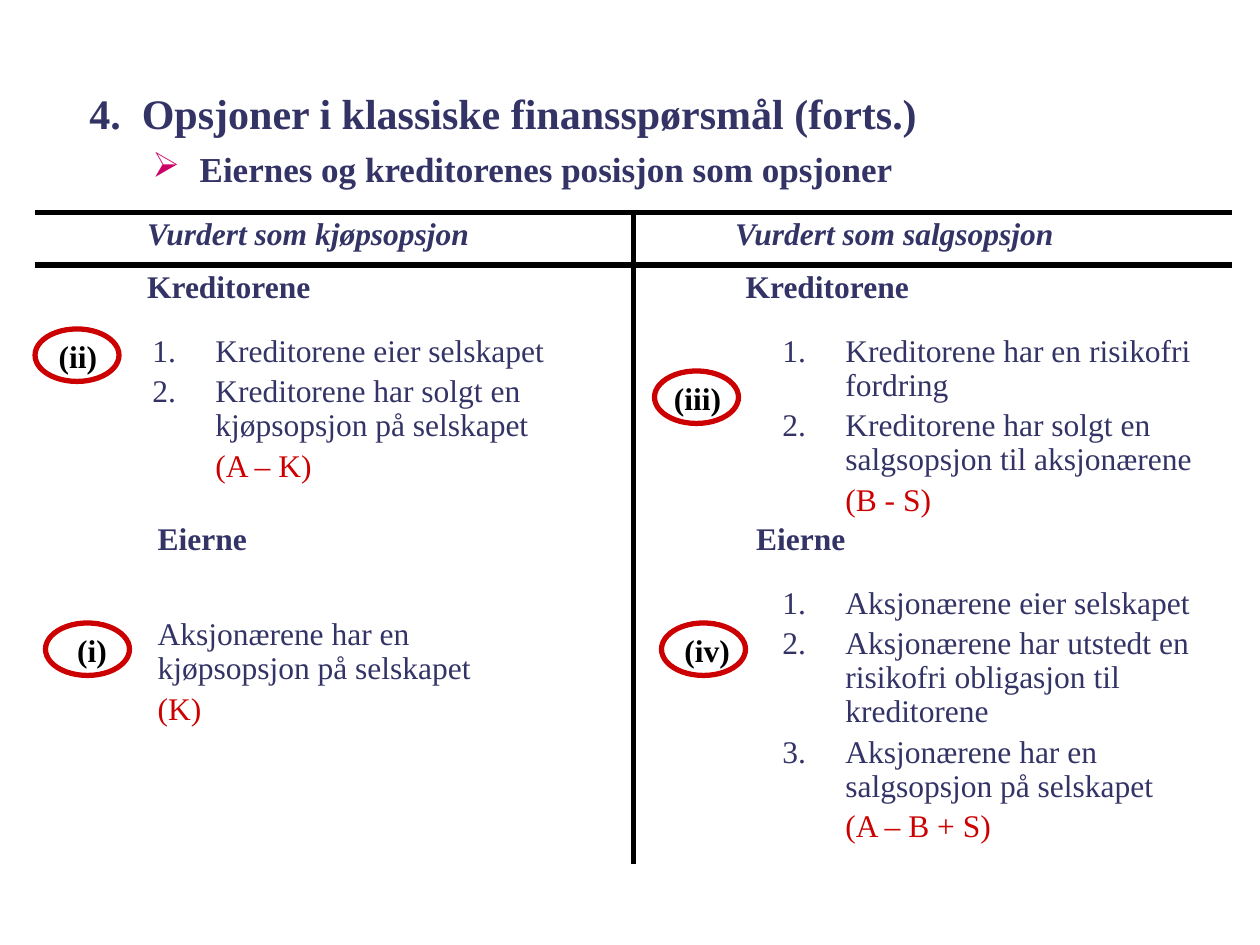
import pptx
import pptx.dml.color
import pptx.enum.shapes
import pptx.enum.text
import pptx.oxml.ns
import pptx.util
from lxml import etree

Pt = pptx.util.Pt
qn = pptx.oxml.ns.qn


def colour(value):
    return pptx.dml.color.RGBColor.from_string(value)


class SlideBuilder:
    font = "Times New Roman"
    ink = "333366"
    red = "CC0000"
    black = "000000"
    accent = "CC0066"
    size = 18
    stroke = 3

    def __init__(self, page):
        self.page = page

    def box(self, left, top, width, height):
        frame = self.page.shapes.add_textbox(Pt(left), Pt(top), Pt(width), Pt(height)).text_frame
        frame.word_wrap = True
        return frame

    def span(self, para, text, fill=None, size=None, bold=False, italic=False):
        span = para.add_run()
        span.text = text
        span.font.name = self.font
        span.font.size = Pt(size or self.size)
        span.font.bold = bold
        span.font.italic = italic
        span.font.color.rgb = colour(fill or self.ink)

    def layout(self, para, margin, hanging=0, marker=None, tight=True):
        properties = para._p.get_or_add_pPr()
        properties.set("marL", str(Pt(margin)))
        properties.set("indent", str(-Pt(hanging)))
        if marker == "number":
            etree.SubElement(properties, qn("a:buAutoNum"), type="arabicPeriod")
        elif marker:
            bullet_colour = etree.SubElement(properties, qn("a:buClr"))
            etree.SubElement(bullet_colour, qn("a:srgbClr"), val=self.accent)
            etree.SubElement(properties, qn("a:buChar"), char=marker)
        if tight:
            para.line_spacing = 0.9

    def title(self, number, text):
        frame = self.box(44, 31.5, 642, 66)
        frame.vertical_anchor = pptx.enum.text.MSO_ANCHOR.MIDDLE
        para = frame.paragraphs[0]
        self.layout(para, 30, 30, tight=False)
        self.span(para, f"{number}\t{text}", size=24, bold=True)

    def subtitle(self, text):
        para = self.box(80, 83.5, 564, 36).paragraphs[0]
        self.layout(para, 27, 27, "➢")
        self.span(para, text, size=20, bold=True)

    def heading(self, left, top, text, width=180, italic=False):
        para = self.box(left, top, width, 30).paragraphs[0]
        self.layout(para, 27)
        self.span(para, text, bold=True, italic=italic)

    def position(self, left, top, height, items, formula, margin=36, marker="number"):
        frame = self.box(left, top, 276, height)
        for index, text in enumerate(items + [formula]):
            para = frame.add_paragraph() if index else frame.paragraphs[0]
            last = index == len(items)
            numbered = marker and not last
            self.layout(para, margin, margin if numbered else 0, marker if numbered else None)
            if index:
                para.space_before = Pt(3.6)
            self.span(para, text, self.red if last else self.ink)

    def badge(self, left, top, text, text_left):
        oval = self.page.shapes.add_shape(
            pptx.enum.shapes.MSO_SHAPE.OVAL, Pt(left), Pt(top), Pt(48), Pt(30))
        oval.shadow.inherit = False
        oval.fill.background()
        oval.line.color.rgb = colour(self.red)
        oval.line.width = Pt(self.stroke)
        para = self.box(text_left, top + 1, 45, 29).paragraphs[0]
        self.span(para, text, self.black, bold=True)

    def rule(self, left, top, right, bottom):
        rule = self.page.shapes.add_connector(
            pptx.enum.shapes.MSO_CONNECTOR.STRAIGHT, Pt(left), Pt(top), Pt(right), Pt(bottom))
        rule.line.color.rgb = colour(self.black)
        rule.line.width = Pt(self.stroke)
        etree.SubElement(rule._element.spPr, qn("a:effectLst"))


def main():
    deck = pptx.Presentation()
    deck.slide_width, deck.slide_height = Pt(720), Pt(540)
    builder = SlideBuilder(deck.slides.add_slide(deck.slide_layouts[6]))

    builder.title("4.", "Opsjoner i klassiske finansspørsmål (forts.)")
    builder.subtitle("Eiernes og kreditorenes posisjon som opsjoner")

    header_top, body_top = 121.5, 151.5
    for top in (header_top, body_top):
        builder.rule(20, top, 704, top)
    builder.rule(362, header_top, 362, 494)

    builder.heading(50, header_top, "Vurdert som kjøpsopsjon", 282, True)
    builder.heading(386, header_top, "Vurdert som salgsopsjon", 282, True)
    for left in (50, 392):
        builder.heading(left, body_top, "Kreditorene")
        builder.heading(left + 6, body_top + 144, "Eierne")

    builder.position(80, 188, 126, [
        "Kreditorene eier selskapet",
        "Kreditorene har solgt en kjøpsopsjon på selskapet",
    ], "(A – K)")
    builder.position(56, 350, 102, [
        "Aksjonærene har en kjøpsopsjon på selskapet",
    ], "(K)", 27, None)
    builder.position(440, 188, 114, [
        "Kreditorene har en risikofri fordring",
        "Kreditorene har solgt en salgsopsjon til aksjonærene",
    ], "(B - S)")
    builder.position(440, 332, 156, [
        "Aksjonærene eier selskapet",
        "Aksjonærene har utstedt en risikofri obligasjon til kreditorene",
        "Aksjonærene har en salgsopsjon på selskapet",
    ], "(A – B + S)")

    for left, top, text, text_left in (
        (26, 356, "(i)", 37),
        (20, 188, "(ii)", 26.5),
        (374, 212, "(iii)", 378),
        (378, 356, "(iv)", 384),
    ):
        builder.badge(left, top, text, text_left)

    deck.save("out.pptx")


if __name__ == "__main__":
    main()
